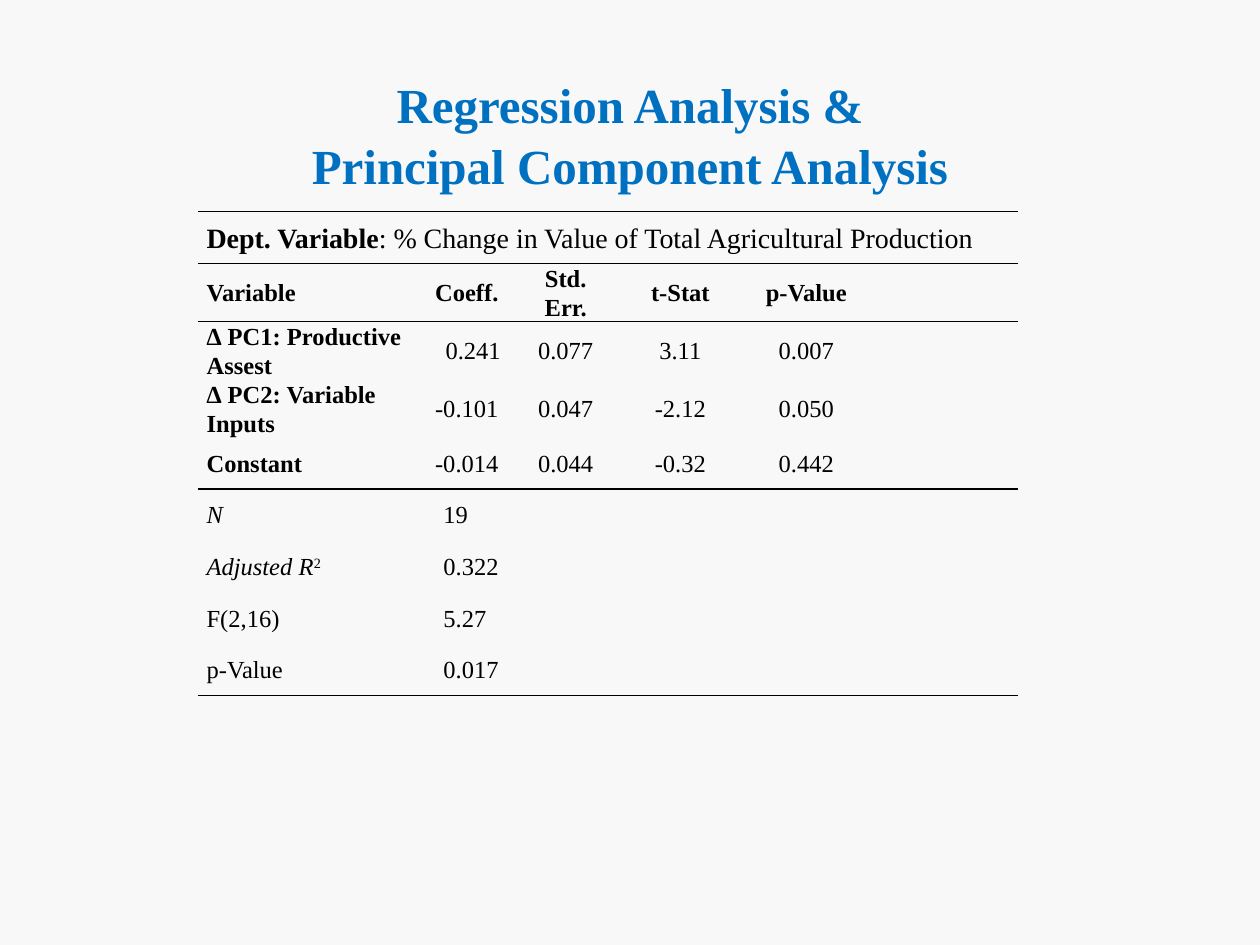
from lxml import etree
from pptx import Presentation
from pptx import util as u
from pptx.dml.color import RGBColor
from pptx.enum import text
from pptx.oxml import ns

BACKGROUND = RGBColor(0xF8, 0xF8, 0xF8)
TITLE_BLUE = RGBColor(0x00, 0x70, 0xC0)
BLACK = RGBColor(0x00, 0x00, 0x00)

PLAIN, BOLD, ITALIC = {}, {"bold": True}, {"italic": True}
CENTER = {"alignment": text.PP_ALIGN.CENTER}

COLUMN_WIDTHS = [1.76, 0.75, 0.82, 1, 1, 1, 0.18]
ROW_HEIGHT = 0.41
HEADINGS = ["Variable", "Coeff.", "Std. Err.", "t-Stat", "p-Value"]
COEFFICIENTS = [
    ["∆ PC1: Productive Assest", "0.241", "0.077", "3.11", "0.007"],
    ["∆ PC2: Variable Inputs", "-0.101", "0.047", "-2.12", "0.050"],
    ["Constant", "-0.014", "0.044", "-0.32", "0.442"],
]
STATISTICS = [
    ([("N", ITALIC)], "19"),
    ([("Adjusted R", ITALIC), ("2", {"superscript": True})], "0.322"),
    ([("F(2,16)", PLAIN)], "5.27"),
    ([("p-Value", PLAIN)], "0.017"),
]
RULE_POSITIONS = [0, 1, 2, 5, 9]  # horizontal rules, counted in rows from the top


class SlideBuilder:
    font_name = "Times New Roman"

    def __init__(self, presentation):
        self.slide = presentation.slides.add_slide(presentation.slide_layouts[5])
        self.slide.background.fill.solid()
        self.slide.background.fill.fore_color.rgb = BACKGROUND

    def format_run(self, run, size, color, values):
        settings = {"name": self.font_name, "size": u.Pt(size),
                    "bold": False, "italic": False, **values}
        if settings.pop("superscript", False):
            run._r.get_or_add_rPr().set("baseline", "30000")
        for name, value in settings.items():
            setattr(run.font, name, value)
        run.font.color.rgb = color

    def title(self, wording, left, top, width, height):
        shape = self.slide.shapes.title
        box = {"left": left, "top": top, "width": width, "height": height}
        for name, value in box.items():
            setattr(shape, name, u.Inches(value))
        shape.text_frame.text = wording
        shape.text_frame.vertical_anchor = text.MSO_ANCHOR.MIDDLE
        paragraph = shape.text_frame.paragraphs[0]
        paragraph.alignment = text.PP_ALIGN.CENTER
        paragraph.line_spacing = 1.05
        for run in paragraph.runs:
            self.format_run(run, 28, TITLE_BLUE, BOLD)

    def table(self, left, top, row_count):
        shape = self.slide.shapes.add_table(
            row_count, len(COLUMN_WIDTHS), u.Inches(left), u.Inches(top),
            u.Inches(sum(COLUMN_WIDTHS)), u.Inches(ROW_HEIGHT * row_count))
        table = shape.table
        table.first_row = table.horz_banding = False
        for column, width in zip(table.columns, COLUMN_WIDTHS):
            column.width = u.Inches(width)
        for index, row in enumerate(table.rows):
            row.height = u.Inches(ROW_HEIGHT)
            for cell in row.cells:
                self.style_cell(cell, index)
        return table

    def style_cell(self, cell, row_index):
        values = {"margin_left": u.Inches(0.07), "margin_right": u.Inches(0.07),
                  "margin_top": 0, "margin_bottom": 0,
                  "vertical_anchor": text.MSO_ANCHOR.MIDDLE}
        for name, value in values.items():
            setattr(cell, name, value)
        cell.fill.background()
        ruled = {"lnL": False, "lnR": False,
                 "lnT": row_index in RULE_POSITIONS,
                 "lnB": row_index + 1 in RULE_POSITIONS}
        properties = cell._tc.get_or_add_tcPr()
        for position, (tag, visible) in enumerate(ruled.items()):
            line = etree.Element(ns.qn(f"a:{tag}"), w=str(u.Pt(1)))
            if visible:
                fill = etree.SubElement(line, ns.qn("a:solidFill"))
                etree.SubElement(fill, ns.qn("a:srgbClr"), val=str(BLACK))
            else:
                etree.SubElement(line, ns.qn("a:noFill"))
            properties.insert(position, line)

    def cell_text(self, cell, runs, size=14, indent=0, alignment=text.PP_ALIGN.LEFT):
        paragraph = cell.text_frame.paragraphs[0]
        paragraph.alignment = alignment
        paragraph.line_spacing = 1.07
        if indent:
            paragraph_properties = paragraph._p.get_or_add_pPr()
            paragraph_properties.set("marL", str(u.Inches(indent)))
            paragraph_properties.set("indent", "0")
        for wording, values in runs:
            run = paragraph.add_run()
            run.text = wording
            self.format_run(run, size, BLACK, values)


def main():
    presentation = Presentation()
    presentation.slide_width = u.Inches(10)
    presentation.slide_height = u.Inches(7.5)
    builder = SlideBuilder(presentation)

    # Title
    builder.title("Regression Analysis &\vPrincipal Component Analysis", 0.5, 0.43, 9, 1.25)

    # Table caption
    table = builder.table(1.57, 1.68, 2 + len(COEFFICIENTS) + len(STATISTICS))
    table.cell(0, 0).merge(table.cell(0, 5))
    builder.cell_text(table.cell(0, 0), [
        ("Dept. Variable", BOLD),
        (": % Change in Value of Total Agricultural Production", PLAIN)], size=16)

    # Headings and coefficients
    for row, entries in enumerate([HEADINGS] + COEFFICIENTS, start=1):
        for column, entry in enumerate(entries):
            values = BOLD if row == 1 or column == 0 else PLAIN
            layout = dict(CENTER) if column else {}
            if (row, column) == (2, 1):
                layout["indent"] = 0.1  # lines the digits up below the minus signs
            builder.cell_text(table.cell(row, column), [(entry, values)], **layout)

    # Model statistics
    for row, (label, value) in enumerate(STATISTICS, start=2 + len(COEFFICIENTS)):
        builder.cell_text(table.cell(row, 0), label)
        builder.cell_text(table.cell(row, 1), [(value, PLAIN)], indent=0.12)

    presentation.save("out.pptx")


if __name__ == "__main__":
    main()
